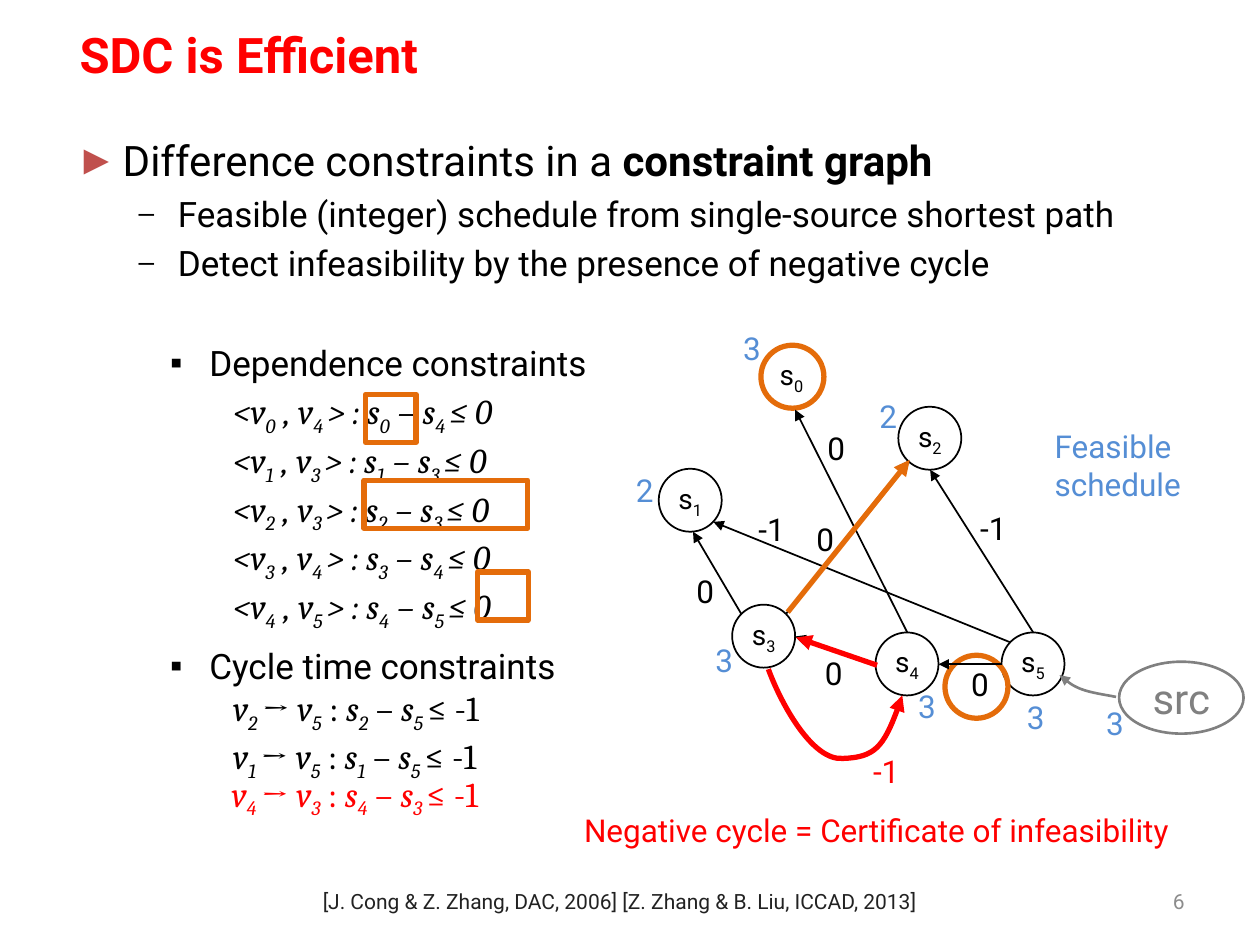
from lxml.etree import SubElement
from pptx import Presentation
from pptx.dml.color import RGBColor
from pptx.enum.shapes import MSO_CONNECTOR, MSO_SHAPE
from pptx.enum.text import MSO_ANCHOR as ANCHOR, PP_ALIGN as ALIGN
from pptx.oxml.ns import qn
from pptx.util import Cm, Pt

BLACK = RGBColor(0x00, 0x00, 0x00)
RED = RGBColor(0xFF, 0x00, 0x00)
ORANGE = RGBColor(0xE4, 0x6C, 0x0A)
BLUE = RGBColor(0x55, 0x8E, 0xD5)
GRAY = RGBColor(0x80, 0x80, 0x80)
PAGE_GRAY = RGBColor(0x8C, 0x8C, 0x8C)
CITATION = RGBColor(0x22, 0x22, 0x22)
BULLET_RED = "C0504D"
UPRIGHT = {"→", " : ", " – ", "≤ -1"}  # symbols kept upright in italic formulas


def write(paragraph, text, size, color=BLACK, font="Roboto", italic=False):
    """Write text in which every second part between bars is a subscript."""
    paragraph.font.size, paragraph.font.name = Pt(size), font
    paragraph.font.color.rgb = color
    paragraph.font.italic = italic
    for i, part in enumerate(text.split("|")):
        if part:
            run = paragraph.add_run()
            run.text = part
            if i % 2:
                run.font._element.set("baseline", "-25000")
            elif italic and part in UPRIGHT:
                run.font.italic = False


def indent(paragraph, left, hanging=0, bullet=None, color=None, size=None):
    """Set the indent (cm) and the bullet of a paragraph."""
    props = paragraph._p.get_or_add_pPr()
    props.set("marL", str(Cm(left)))
    props.set("indent", str(Cm(-hanging)))
    if color:
        SubElement(SubElement(props, qn("a:buClr")), qn("a:srgbClr"), val=color)
    if size:
        SubElement(props, qn("a:buSzPct"), val=str(size * 1000))
    if bullet:
        SubElement(props, qn("a:buFont"), typeface="Arial")
        SubElement(props, qn("a:buChar"), char=bullet)


prs = Presentation()
prs.slide_width, prs.slide_height = Cm(25.4), Cm(19.05)
slide = prs.slides.add_slide(prs.slide_layouts[1])
shapes = slide.shapes

# Title
title = shapes.title
title.left, title.top, title.width, title.height = Cm(1.35), Cm(0.08), Cm(22.86), Cm(2.03)
title.text_frame.vertical_anchor = ANCHOR.MIDDLE
heading = title.text_frame.paragraphs[0]
heading.alignment = ALIGN.LEFT
heading.font.bold = True
write(heading, "SDC is Efficient", 28, RED)

# Main points
body = slide.placeholders[1]
body.left, body.top, body.width, body.height = Cm(1.27), Cm(2.59), Cm(22.86), Cm(12.57)
main_point = body.text_frame.paragraphs[0]
main_point.space_before = Pt(18)
indent(main_point, 0.95, 0.95, "►", BULLET_RED)
write(main_point, "Difference constraints in a ", 24)
term = main_point.add_run()
term.text, term.font.bold = "constraint graph", True
for point in ("Feasible (integer) schedule from single-source shortest path",
              "Detect infeasibility by the presence of negative cycle"):
    sub_point = body.text_frame.add_paragraph()
    sub_point.level = 1
    sub_point.space_before = Pt(4)
    indent(sub_point, 2.06, 0.79, "–", size=80)
    write(sub_point, point, 20)

# Constraint lists
constraints = shapes.add_textbox(Cm(3.18), Cm(6.76), Cm(9.83), Cm(9.96)).text_frame
constraints.word_wrap = True
dependence = constraints.paragraphs[0]
indent(dependence, 0.79, 0.79, "▪")
write(dependence, "Dependence constraints", 20)
for a, b in ((0, 4), (1, 3), (2, 3), (3, 4), (4, 5)):
    row = constraints.add_paragraph()
    row.line_spacing, row.space_before = 0.8, Pt(6)
    indent(row, 1.27)
    write(row, f"<v|{a}| , v|{b} |> : s|{a}| – s|{b} |≤ 0", 20, font="Cambria", italic=True)
cycle_time = constraints.add_paragraph()
cycle_time.space_before = Pt(10)
indent(cycle_time, 0.79, 0.79, "▪")
write(cycle_time, "Cycle time constraints", 20)

CYCLE = "v|{0} |→|| v|{1}| : ||s|{0}| – ||s|{1} |≤ -1"
for a, b in ((2, 5), (1, 5)):
    row = constraints.add_paragraph()
    indent(row, 1.27)
    write(row, CYCLE.format(a, b), 20, font="Cambria", italic=True)
violated = shapes.add_textbox(Cm(4.42), Cm(15.44), Cm(6.22), Cm(1.12)).text_frame
violated.word_wrap = False
write(violated.paragraphs[0], CYCLE.format(4, 3), 20, RED, "Cambria", True)

# Graph nodes, the source and the orange highlights
NODE = 1.27
nodes = [(15.32, 6.96), (13.28, 9.45), (18.11, 8.2), (14.76, 12.19), (17.65, 12.75), (20.19, 12.75)]
outlines = [(MSO_SHAPE.OVAL, x, y, NODE, NODE, BLACK, 1, f"s|{i}", 16)
            for i, (x, y) in enumerate(nodes)]
outlines.append((MSO_SHAPE.OVAL, 22.56, 13.34, 2.51, 1.45, GRAY, 1.5, "src", 24))
outlines += [(MSO_SHAPE.OVAL, x, y, NODE, NODE, ORANGE, 3, "", 16)
             for x, y in ((15.34, 6.96), (19.05, 13.21))]
outlines += [(MSO_SHAPE.RECTANGLE, x, y, w, 0.97, ORANGE, 3, "", 16)
             for x, y, w in ((7.37, 7.95, 1.02), (7.34, 9.68, 3.3), (9.63, 11.53, 1.02))]
for kind, x, y, w, h, color, weight, text, size in outlines:
    outline = shapes.add_shape(kind, Cm(x), Cm(y), Cm(w), Cm(h))
    outline.shadow.inherit = False
    outline.fill.background()
    outline.line.color.rgb, outline.line.width = color, Pt(weight)
    if text:
        frame = outline.text_frame
        frame.word_wrap, frame.vertical_anchor = False, ANCHOR.MIDDLE
        frame.margin_left = frame.margin_right = frame.margin_top = frame.margin_bottom = 0
        frame.paragraphs[0].alignment = ALIGN.CENTER
        write(frame.paragraphs[0], text, size, color)

# Straight edges, each from its tail to its arrowhead
arrows = []
for x1, y1, x2, y2, color, weight in (
        (18.29, 12.75, 16.03, 8.26, BLACK, 1),
        (14.94, 12.37, 13.97, 10.72, BLACK, 1),
        (15.85, 12.37, 18.29, 9.3, BLACK, 1),
        (17.65, 13.39, 16.03, 12.83, BLACK, 1),
        (20.83, 12.75, 18.75, 9.47, BLACK, 1),
        (20.19, 13.39, 18.92, 13.39, BLACK, 1),
        (20.37, 12.95, 14.38, 10.52, BLACK, 1),
        (17.68, 13.41, 16.05, 12.85, RED, 3),
        (15.88, 12.34, 18.34, 9.27, ORANGE, 3)):
    edge = shapes.add_connector(MSO_CONNECTOR.STRAIGHT, Cm(x1), Cm(y1), Cm(x2), Cm(y2))
    arrows.append((edge, color, weight))

# Curved edges: each three points after the start make one Bézier segment
for points, color, weight in (
        (((15.49, 13.49), (15.75, 14.2), (16.38, 15.34), (16.99, 15.29),
          (17.63, 15.27), (17.86, 15.01), (18.19, 14.02)), RED, 3),
        (((22.5, 14.05), (22.25, 14), (22, 13.97), (21.79, 13.89),
          (21.62, 13.82), (21.49, 13.72), (21.36, 13.61)), GRAY, 1.5)):
    start, *rest = [(Cm(x), Cm(y)) for x, y in points]
    builder = shapes.build_freeform(*start)
    builder.add_line_segments(rest, close=False)
    curve = builder.convert_to_shape()
    curve.fill.background()
    outline_path = next(curve._element.iter(qn("a:path")))
    steps = outline_path.findall(qn("a:lnTo"))
    for i in range(0, len(steps), 3):
        bezier = SubElement(outline_path, qn("a:cubicBezTo"))
        for step in steps[i:i + 3]:
            bezier.append(step[0])
            outline_path.remove(step)
    arrows.append((curve, color, weight))

# Line style and arrowhead of all edges
for edge, color, weight in arrows:
    edge.line.color.rgb, edge.line.width = color, Pt(weight)
    SubElement(edge.line._get_or_add_ln(), qn("a:tailEnd"), type="triangle")
    SubElement(edge._element.spPr, qn("a:effectLst"))

# Edge weights (black and red) and schedule times (blue)
for text, color, places in (
        ("-1", BLACK, ((19.51, 10.13), (15.04, 10.16))),
        ("-1", RED, ((17.35, 15.04),)),
        ("0", BLACK, ((16.43, 8.53), (16.21, 10.36), (13.79, 11.4), (16.38, 13.06), (19.33, 13.28))),
        ("3", BLUE, ((22.05, 14.07), (18.26, 13.72), (14.17, 12.8), (14.73, 6.5), (20.45, 13.94))),
        ("2", BLUE, ((17.48, 7.87), (12.57, 9.37)))):
    for x, y in places:
        label = shapes.add_textbox(Cm(x), Cm(y), Cm(0.24 + 0.62 * len(text)), Cm(1.02)).text_frame
        label.word_wrap = False
        write(label.paragraphs[0], text, 18, color)

# Remarks, citation and page number
for x, y, w, h, lines, size, color, align in (
        (21.01, 8.48, 3.12, 1.8, ("Feasible", "schedule"), 18, BLUE, ALIGN.LEFT),
        (11.51, 16.23, 12.32, 1.02, ("Negative cycle = Certificate of infeasibility",),
         18, RED, ALIGN.CENTER),
        (0, 17.78, 25.1, 0.76, ("[J. Cong & Z. Zhang, DAC, 2006] [Z. Zhang & B. Liu, ICCAD, 2013] ",),
         12, CITATION, ALIGN.CENTER),
        (18.21, 17.78, 5.92, 0.76, ("6",), 12, PAGE_GRAY, ALIGN.RIGHT)):
    remark = shapes.add_textbox(Cm(x), Cm(y), Cm(w), Cm(h)).text_frame
    remark.word_wrap = True
    for i, line in enumerate(lines):
        paragraph = remark.add_paragraph() if i else remark.paragraphs[0]
        paragraph.alignment = align
        write(paragraph, line, size, color)

prs.save("out.pptx")
